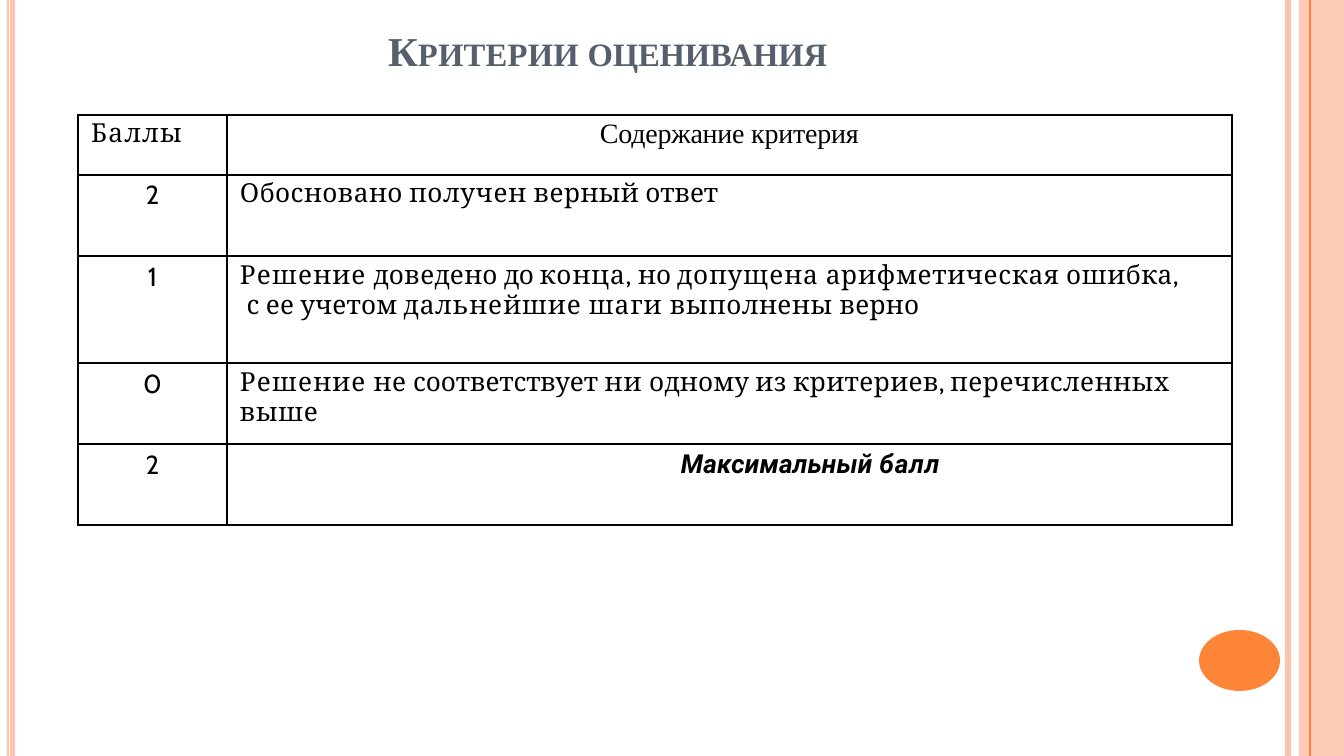
from dataclasses import dataclass
from lxml import etree
from pptx import Presentation
from pptx import util as u
from pptx.dml.color import RGBColor
from pptx.enum import shapes, text
from pptx.oxml.ns import qn


@dataclass(frozen=True)
class Theme:
    title: str = "565F6C"
    ink: str = "000000"
    paper: str = "FFFFFF"
    pale: str = "FDC3AD"
    accent: str = "FD8537"
    serif: str = "Times New Roman"
    body: str = "Cambria"
    digits: str = "Cabin"
    total: str = "Roboto"
    cap_size: float = 22
    small_cap_size: float = 17.5
    head_size: float = 15
    body_size: float = 14


T = Theme()

# Runs are (text, letter spacing in points).
TITLE = [("К", 0.1), ("РИТЕРИИ ", 0.1), ("ОЦЕНИВАНИЯ", -0.1)]
HEADER = [("Баллы", 0.8)], [("Содержание критерия", -0.1)]
CRITERIA = [  # points, paragraphs, row height
    ("2", [[("Обосновано ", 0.2), ("получен ", 0.4), ("верный ", 0.2),
            ("ответ", -0.1)]], 81),
    ("1", [[("Решение ", 0.6), ("доведено ", 0.1), ("до ", -0.1),
            ("конца, ", 0.5), ("но ", 0), ("допущена ", 0.5),
            ("арифметическая ", 0.4), ("ошибка,", 0.3)],
           [(" ", 0.5), ("с ее учетом ", 0.1), ("дальнейшие ", 0.5),
            ("шаги ", 0.6), ("выполнены ", 0.3), ("верно", 0.1)]], 107),
    ("0", [[("Решение ", 0.6), ("не ", 0.3), ("соответствует", -0.1),
            (" ни ", 0.5), ("одному ", 0.1), ("из ", 0.3),
            ("критериев, ", 0.2), ("перечисленных выше", 0.3)]], 81),
]
TOTAL = "2", [[("Максимальный ", 0.1), ("балл", 0.5)]], 81

W, H = 1344, 756
TABLE_LEFT, TABLE_TOP = 78, 115
COLUMNS = [149, 1005]
HEADER_HEIGHT = 60
INDENT, TOTAL_INDENT = 13, 454
BANDS = [(7, 2, 0), (10, 5, 0), (1299, 45, 13)]  # left, width, transparency %
RULES = [(1288, T.pale, 3), (1310, T.accent, 0.72)]
OVAL = 1199, 630, 81, 61


def px(n):
    return u.Emu(round(n * 914400 / 134.4))


def add_runs(p, runs, font, size, color=T.ink, bold=False, italic=False):
    for words, spacing in runs:
        r = p.add_run()
        r.text = words
        f = r.font
        f.name, f.size, f.bold, f.italic = font, u.Pt(size), bold, italic
        f.color.rgb = RGBColor.from_string(color)
        f._element.set("spc", str(round(spacing * 100)))


def indent(p, n):
    pPr = p._p.get_or_add_pPr()
    pPr.set("marL", str(px(n)))
    pPr.set("indent", "0")


def add_filled(slide, kind, box, color, transparency=0):
    sp = slide.shapes.add_shape(kind, *map(px, box))
    sp.shadow.inherit = False
    sp.fill.solid()
    sp.fill.fore_color.rgb = RGBColor.from_string(color)
    sp.line.fill.background()
    if transparency:
        clr = sp.fill._xPr.find(".//" + qn("a:srgbClr"))
        etree.SubElement(clr, qn("a:alpha"), val=str((100 - transparency) * 1000))


def add_frame(slide):
    """Draw the side bands, the vertical rules and the page-number oval."""
    for left, width, transparency in BANDS:
        add_filled(slide, shapes.MSO_SHAPE.RECTANGLE, (left, 0, width, H),
                   T.pale, transparency)
    for x, color, width in RULES:
        line = slide.shapes.add_connector(
            shapes.MSO_CONNECTOR.STRAIGHT, px(x), 0, px(x), px(H))
        line.line.color.rgb = RGBColor.from_string(color)
        line.line.width = u.Pt(width)
        etree.SubElement(line._element.spPr, qn("a:effectLst"))
    add_filled(slide, shapes.MSO_SHAPE.OVAL, OVAL, T.accent)


def add_title(slide):
    sp = slide.shapes.title
    sp.left, sp.top, sp.width, sp.height = map(px, (387, 24, 447, 52))
    tf = sp.text_frame
    tf.word_wrap = True
    tf.auto_size = text.MSO_AUTO_SIZE.SHAPE_TO_FIT_TEXT
    tf.vertical_anchor = text.MSO_ANCHOR.TOP
    tf.margin_left = tf.margin_right = tf.margin_bottom = 0
    tf.margin_top = px(1)
    p = tf.paragraphs[0]
    p.alignment = text.PP_ALIGN.LEFT
    p.space_before = u.Pt(0.9)
    indent(p, 1)
    add_runs(p, TITLE[:1], T.serif, T.cap_size, T.title, True)
    add_runs(p, TITLE[1:], T.serif, T.small_cap_size, T.title, True)


def style_cell(cell, top):
    cell.margin_left = cell.margin_right = cell.margin_bottom = 0
    cell.margin_top = px(top)
    tcPr = cell._tc.get_or_add_tcPr()
    for side in ("lnL", "lnR", "lnT", "lnB"):
        ln = etree.SubElement(tcPr, qn("a:" + side), w=str(u.Pt(1)))
        fill = etree.SubElement(ln, qn("a:solidFill"))
        etree.SubElement(fill, qn("a:srgbClr"), val=T.ink)
    cell.fill.solid()
    cell.fill.fore_color.rgb = RGBColor.from_string(T.paper)


def fill_cell(cell, paragraphs, font, size=T.body_size, left=None, **style):
    """Write the paragraphs, centred unless a left indent is given."""
    tf = cell.text_frame
    for i, runs in enumerate(paragraphs):
        p = tf.add_paragraph() if i else tf.paragraphs[0]
        p.space_before = u.Pt(0 if i else 2.5)
        if left is None:
            p.alignment = text.PP_ALIGN.CENTER
        else:
            indent(p, left)
        add_runs(p, runs, font, size, **style)


def add_criteria(slide):
    rows = CRITERIA + [TOTAL]
    heights = [HEADER_HEIGHT] + [height for _, _, height in rows]
    table = slide.shapes.add_table(
        len(heights), len(COLUMNS), px(TABLE_LEFT), px(TABLE_TOP),
        px(sum(COLUMNS)), px(sum(heights))).table
    table.first_row = table.horz_banding = False
    for column, width in zip(table.columns, COLUMNS):
        column.width = px(width)
    for i, (row, height) in enumerate(zip(table.rows, heights)):
        row.height = px(height)
        for cell in row.cells:
            style_cell(cell, 4 if i < 2 else 5)
    fill_cell(table.cell(0, 0), [HEADER[0]], T.body, left=INDENT)
    fill_cell(table.cell(0, 1), [HEADER[1]], T.serif, T.head_size)
    for i, (points, paragraphs, _) in enumerate(rows, 1):
        fill_cell(table.cell(i, 0), [[(points, 0)]], T.digits)
        if i <= len(CRITERIA):
            fill_cell(table.cell(i, 1), paragraphs, T.body, left=INDENT)
        else:
            fill_cell(table.cell(i, 1), paragraphs, T.total,
                      left=TOTAL_INDENT, bold=True, italic=True)


def main():
    prs = Presentation()
    prs.slide_width, prs.slide_height = px(W), px(H)
    slide = prs.slides.add_slide(prs.slide_layouts[5])
    add_frame(slide)
    add_title(slide)
    add_criteria(slide)
    prs.save("out.pptx")


if __name__ == "__main__":
    main()
